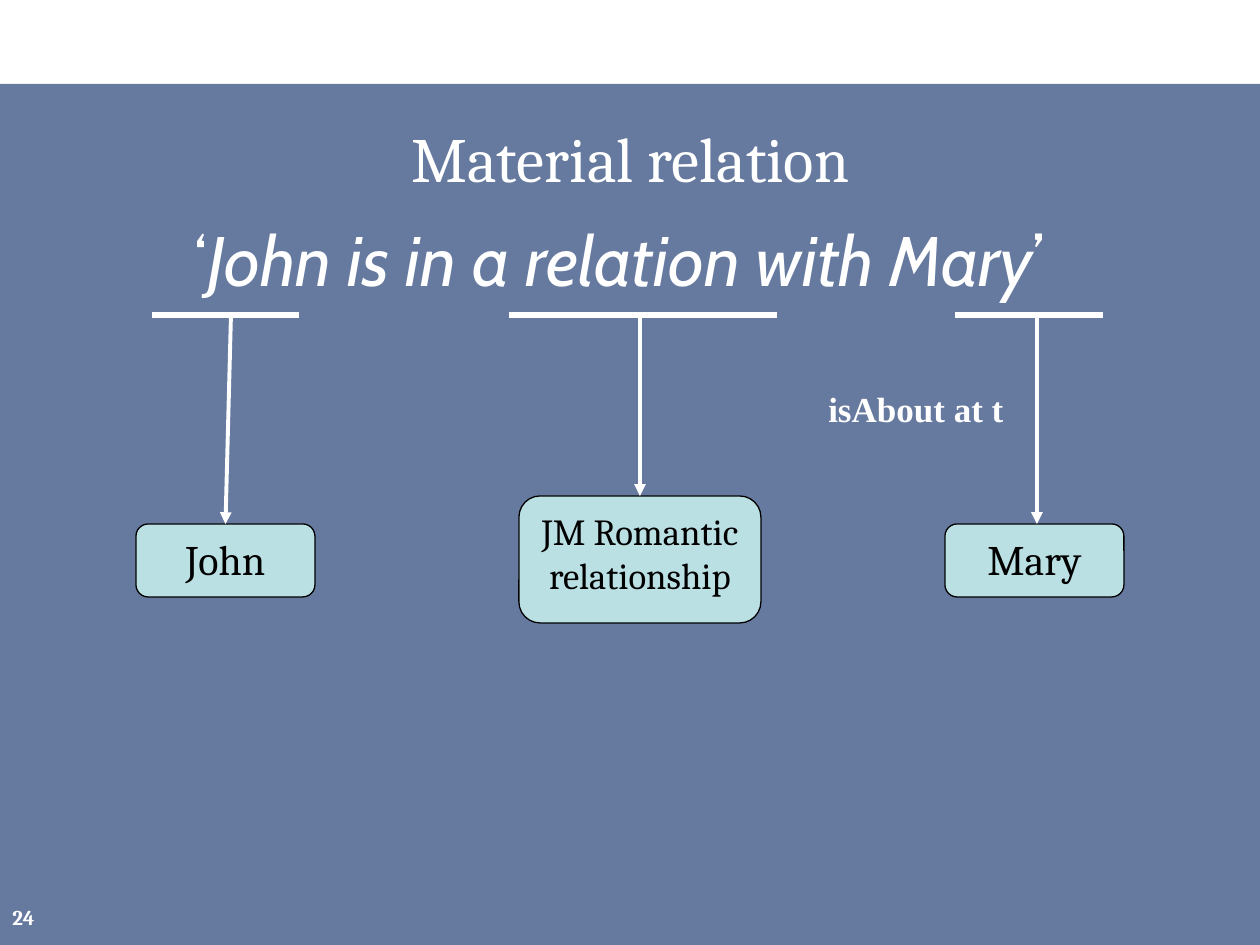
import pptx
import pptx.util
import pptx.dml.color
import pptx.enum.shapes
import pptx.enum.text
import pptx.oxml
import pptx.oxml.ns

SCALE = 914400 / 126
WHITE, BLACK, NAVY, MINT = "FFFFFF", "000000", "002060", "BBE0E3"
CENTER = pptx.enum.text.PP_ALIGN.CENTER
LEFT = pptx.enum.text.PP_ALIGN.LEFT
TOP = pptx.enum.text.MSO_ANCHOR.TOP
MIDDLE = pptx.enum.text.MSO_ANCHOR.MIDDLE
SHAPE = pptx.enum.shapes.MSO_SHAPE

TITLE = [("Material relation", False)]
SENTENCE = [("‘", False), ("John is in a relation with Mary", True), ("’", False)]
RULE_Y = 315
ENTITIES = [
    {"text": "John", "size": 24, "box": (136, 524, 179, 73),
     "rule": (152, 299), "arrow": (231, 226), "joined": True},
    {"text": "Mary", "size": 24, "box": (945, 524, 179, 73),
     "rule": (955, 1103), "arrow": (1037, 1037), "joined": False},
    {"text": "JM Romantic relationship", "size": 21, "box": (519, 496, 242, 127),
     "rule": (509, 777), "arrow": (640, 640), "joined": True},
]


def px(value):
    return round(value * SCALE)


def color(value):
    return pptx.dml.color.RGBColor.from_string(value)


def place(shape, area):
    shape.left, shape.top, shape.width, shape.height = map(px, area)


def add_xml(parent, tag, **attributes):
    child = pptx.oxml.parse_xml(f"<a:{tag} {pptx.oxml.ns.nsdecls('a')}/>")
    for name, value in attributes.items():
        child.set(name, value)
    parent.append(child)


def write(shape, runs, size, font, fill=WHITE, bold=False, align=CENTER, anchor=TOP, wrap=True):
    frame = shape.text_frame
    frame.auto_size = pptx.enum.text.MSO_AUTO_SIZE.NONE
    frame.word_wrap = wrap
    frame.vertical_anchor = anchor
    para = frame.paragraphs[0]
    para.alignment = align
    for text, italic in runs:
        span = para.add_run()
        span.text = text
        span.font.size = pptx.util.Pt(size)
        span.font.name = font
        span.font.bold = bold
        span.font.italic = italic
        span.font.color.rgb = color(fill)
    return para


def add_box(page, kind, area, fill):
    box = page.shapes.add_shape(kind, *map(px, area))
    box.shadow.inherit = False
    box.fill.solid()
    box.fill.fore_color.rgb = color(fill)
    return box


def add_line(page, start, end, width):
    line = page.shapes.add_connector(
        pptx.enum.shapes.MSO_CONNECTOR.STRAIGHT, *map(px, start + end))
    line.line.color.rgb = color(WHITE)
    line.line.width = pptx.util.Pt(width)
    add_xml(line._element.spPr, "effectLst")
    return line


def add_entity(page, entity):
    box = add_box(page, SHAPE.ROUNDED_RECTANGLE, entity["box"], MINT)
    box.line.color.rgb = color(BLACK)
    box.line.width = pptx.util.Pt(0.75)
    write(box, [(entity["text"], False)], entity["size"], "Cambria", BLACK)
    left, right = entity["rule"]
    add_line(page, (left, RULE_Y), (right, RULE_Y), 3)
    start, end = entity["arrow"]
    arrow = add_line(page, (start, RULE_Y), (end, entity["box"][1]), 2.25)
    add_xml(arrow.line._get_or_add_ln(), "tailEnd", type="triangle")
    if entity["joined"]:
        arrow.end_connect(box, 0)


def main():
    deck = pptx.Presentation()
    deck.slide_width, deck.slide_height = px(1260), px(945)
    page = deck.slides.add_slide(deck.slide_layouts[1])

    band = add_box(page, SHAPE.RECTANGLE, (0, 84, 1260, 861), NAVY)
    band.line.fill.background()
    add_xml(band.fill._xPr.solidFill[0], "alpha", val="60000")
    page.shapes._spTree.insert(2, band._element)

    title, body = page.placeholders
    place(title, (32, 105, 1197, 105))
    write(title, TITLE, 36, "Cambria", anchor=MIDDLE)

    place(body, (21, 210, 1197, 168))
    sentence = write(body, SENTENCE, 40, "Cabin")
    properties = sentence._p.get_or_add_pPr()
    properties.set("marL", str(px(48)))
    properties.set("indent", str(px(-48)))
    add_xml(properties, "buNone")

    number = page.shapes.add_textbox(*map(px, (0, 892, 66, 50)))
    write(number, [("24", False)], 12, "Cambria", bold=True, align=LEFT, anchor=MIDDLE)

    for entity in ENTITIES:
        add_entity(page, entity)

    label = page.shapes.add_textbox(*map(px, (815, 381, 202, 55)))
    write(label, [("isAbout at t", False)], 20, "Times New Roman", bold=True, wrap=False)

    deck.save("out.pptx")


if __name__ == "__main__":
    main()
